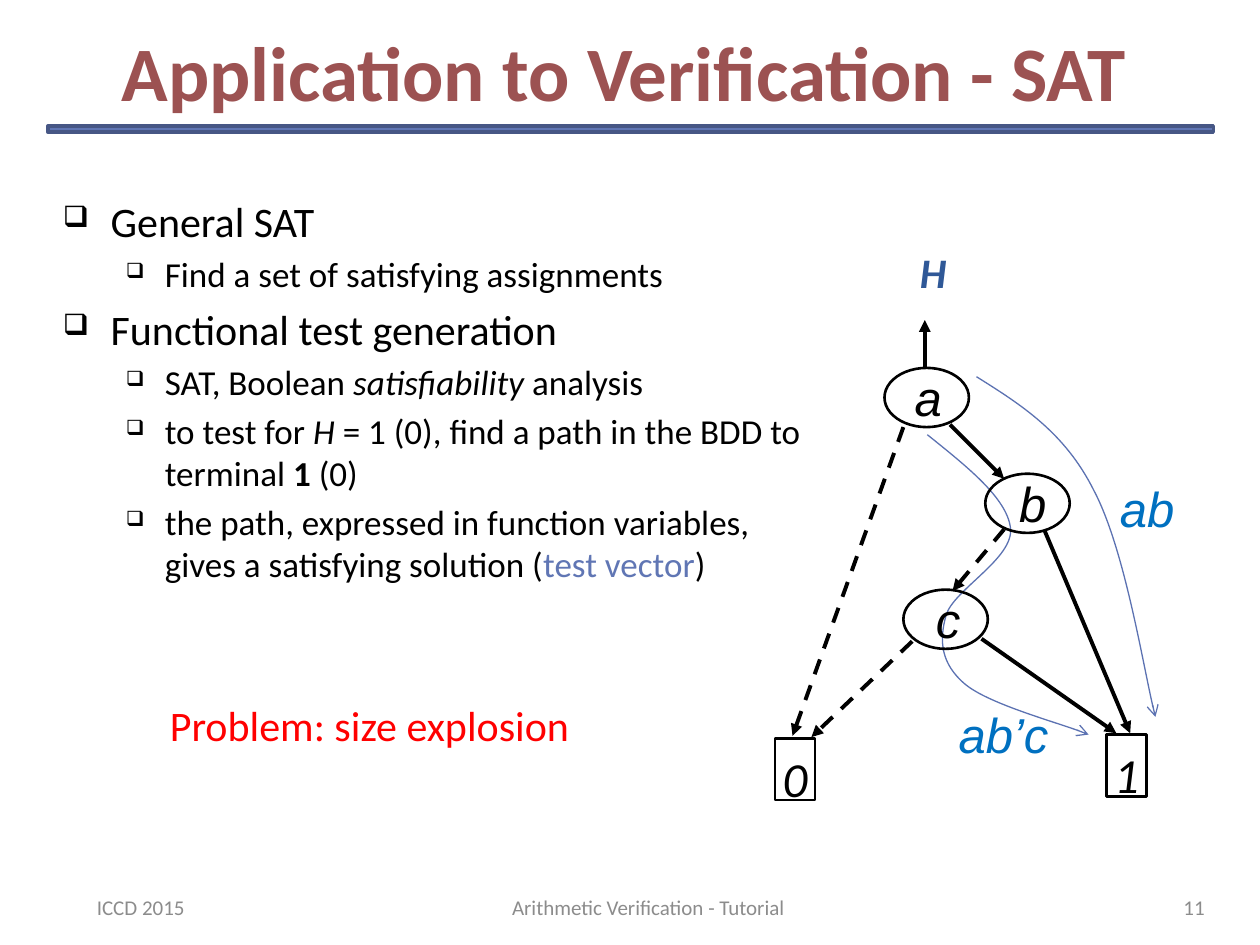
"""Build a slide on satisfiability with a binary decision diagram."""
from lxml.etree import SubElement
from pptx import Presentation
from pptx.dml.color import RGBColor
from pptx.enum.dml import MSO_LINE
from pptx.enum.shapes import MSO_CONNECTOR, MSO_SHAPE
from pptx.enum.text import MSO_ANCHOR, PP_ALIGN
from pptx.oxml.ns import qn
from pptx.util import Inches, Pt

BLACK, BLUE, SKY, GREY = "000000", "6076B4", "0070C0", "8C8C8C"
MID, RIGHT = PP_ALIGN.CENTER, PP_ALIGN.RIGHT


def tint(code):
    return RGBColor.from_string(code)


def write(para, text, size=20, font="Calibri", color=BLACK, bold=False, italic=False):
    run = para.add_run()
    run.text = text
    face = run.font
    face.size, face.name = Pt(size), font
    face.bold, face.italic = bold, italic
    face.color.rgb = tint(color)


class Deck:
    def __init__(self):
        self.file = Presentation()
        self.file.slide_width, self.file.slide_height = Inches(10), Inches(7.5)
        self.slide = self.file.slides.add_slide(self.file.slide_layouts[6])
        self.shapes = self.slide.shapes

    def frame(self, box, wrap=True, anchor=MSO_ANCHOR.TOP):
        frame = self.shapes.add_textbox(*map(Inches, box)).text_frame
        frame.word_wrap, frame.vertical_anchor = wrap, anchor
        return frame

    def label(self, box, text, align=PP_ALIGN.LEFT, wrap=False,
              anchor=MSO_ANCHOR.TOP, **style):
        para = self.frame(box, wrap, anchor).paragraphs[0]
        para.alignment = align
        write(para, text, **style)

    def bullets(self, box, items):
        frame = self.frame(box)
        for num, (level, runs) in enumerate(items):
            para = frame.add_paragraph() if num else frame.paragraphs[0]
            size, left, hang, scale = [(24, 0.38, 0.38, 70), (20, 0.81, 0.31, 60)][level]
            para.level, para.space_before = level, Pt(size * 0.2)
            props = para._p.get_or_add_pPr()
            props.set("marL", str(Inches(left)))
            props.set("indent", str(-Inches(hang)))
            SubElement(props, qn("a:buSzPct"), val=str(scale * 1000))
            SubElement(props, qn("a:buChar"), char="❑")
            for text, style in runs:
                write(para, text, size=size, **style)

    def shape(self, kind, box, color=BLACK, width=1.5, fill=None):
        item = self.shapes.add_shape(kind, *map(Inches, box))
        item.shadow.inherit = False
        if fill:
            item.fill.solid()
            item.fill.fore_color.rgb = tint(fill)
        else:
            item.fill.background()
        self.stroke(item, color, width)

    def stroke(self, item, color, width, head=None):
        item.line.color.rgb, item.line.width = tint(color), Pt(width)
        if head:
            SubElement(item.line._get_or_add_ln(), qn("a:tailEnd"), type=head)

    def arrow(self, start, end, dash=False):
        item = self.shapes.add_connector(
            MSO_CONNECTOR.STRAIGHT, *map(Inches, start + end))
        if dash:
            item.line.dash_style = MSO_LINE.DASH
        self.stroke(item, BLACK, 2.25, "triangle")
        SubElement(item._element.spPr, qn("a:effectLst"))

    def curve(self, start, *points):
        pen = self.shapes.build_freeform(*map(Inches, start))
        pen.add_line_segments([tuple(map(Inches, p)) for p in points], close=False)
        item = pen.convert_to_shape()
        route = item._element.find(".//" + qn("a:path"))
        lines = iter(route.findall(qn("a:lnTo")))
        for trio in zip(lines, lines, lines):
            bend = SubElement(route, qn("a:cubicBezTo"))
            for line in trio:
                bend.append(line[0])
                route.remove(line)
        item.shadow.inherit = False
        item.fill.background()
        self.stroke(item, "5C72B2", 0.75, "arrow")


def main():
    deck = Deck()
    deck.shape(MSO_SHAPE.RECTANGLE, (0.38, 1, 9.25, 0.05), "475785", 2, BLUE)
    deck.label((0.08, 0.13, 9.75, 0.87), "Application to Verification - SAT", MID,
               True, MSO_ANCHOR.MIDDLE, size=44, color="9C5252", bold=True)
    plain, slant = {}, {"italic": True}
    deck.bullets((0.4, 1.5, 6.09, 3.92), [
        (0, [("General SAT", plain)]),
        (1, [("Find a set of satisfying assignments", plain)]),
        (0, [("Functional test generation", plain)]),
        (1, [("SAT, Boolean ", plain), ("satisfiability ", slant), ("analysis", plain)]),
        (1, [("to test for ", plain), ("H", slant),
             (" = 1 (0), find a path in the BDD to terminal ", plain),
             ("1", {"bold": True}), (" (0)", plain)]),
        (1, [("the path, expressed in function variables, gives a satisfying solution (",
              plain), ("test vector", {"color": BLUE}), (")", plain)]),
    ])

    deck.curve((7.75, 2.99), (8.1, 3.21), (8.45, 3.43), (8.68, 3.89),
               (8.92, 4.34), (9.09, 5.39), (9.17, 5.69))
    deck.curve((7.36, 3.45), (7.67, 3.7), (7.99, 3.95), (8.02, 4.19),
               (8.05, 4.43), (7.57, 4.68), (7.51, 4.88),
               (7.45, 5.09), (7.47, 5.27), (7.66, 5.43),
               (7.84, 5.58), (8.48, 5.76), (8.64, 5.83))
    for text, left, top, width in [("ab", 8.79, 3.75, 0.63), ("ab’c", 7.51, 5.54, 0.92)]:
        deck.label((left, top, width, 0.57), text,
                   size=28, font="Arial", color=SKY, italic=True)
    deck.label((7.2, 1.91, 0.41, 0.51), "H", MID,
               size=24, color="2F5897", bold=True, italic=True)

    for text, left, top, shift in [("a", 7.02, 2.92, 0.14), ("b", 7.82, 3.76, 0.17),
                                   ("c", 7.17, 4.68, 0.16)]:
        deck.shape(MSO_SHAPE.OVAL, (left, top, 0.67, 0.47))
        deck.label((left + shift, top - 0.05, 0.42, 0.57), text,
                   size=28, font="Arial", italic=True)
    for text, left, top in [("0", 6.15, 5.86), ("1", 8.78, 5.83)]:
        deck.shape(MSO_SHAPE.RECTANGLE, (left, top, 0.32, 0.49))
        deck.label((left - 0.05, top + 0.03, 0.42, 0.57), text, MID,
                   size=28, italic=True)

    for start, end, dash in [
        ((7.34, 2.91), (7.34, 2.54), False),
        ((7.17, 3.39), (6.29, 5.84), True),
        ((7.24, 5.09), (6.44, 5.85), True),
        ((7.97, 4.2), (7.56, 4.69), True),
        ((7.54, 3.37), (7.97, 3.8), False),
        ((8.29, 4.21), (8.97, 5.82), False),
        ((7.79, 5.07), (8.86, 5.82), False),
    ]:
        deck.arrow(start, end, dash)

    deck.label((1.25, 5.5, 3.4, 0.5), "Problem: size explosion", size=24, color="FF0000")
    for text, left, width, align in [
        ("ICCD 2015", 0.67, 2.33, PP_ALIGN.LEFT),
        ("Arithmetic Verification - Tutorial ", 3.58, 3.17, MID),
        ("11", 7.33, 2.33, RIGHT),
    ]:
        deck.label((left, 7, width, 0.4), text, align, True, MSO_ANCHOR.MIDDLE,
                   size=12, color=GREY)
    deck.file.save("out.pptx")


if __name__ == "__main__":
    main()
